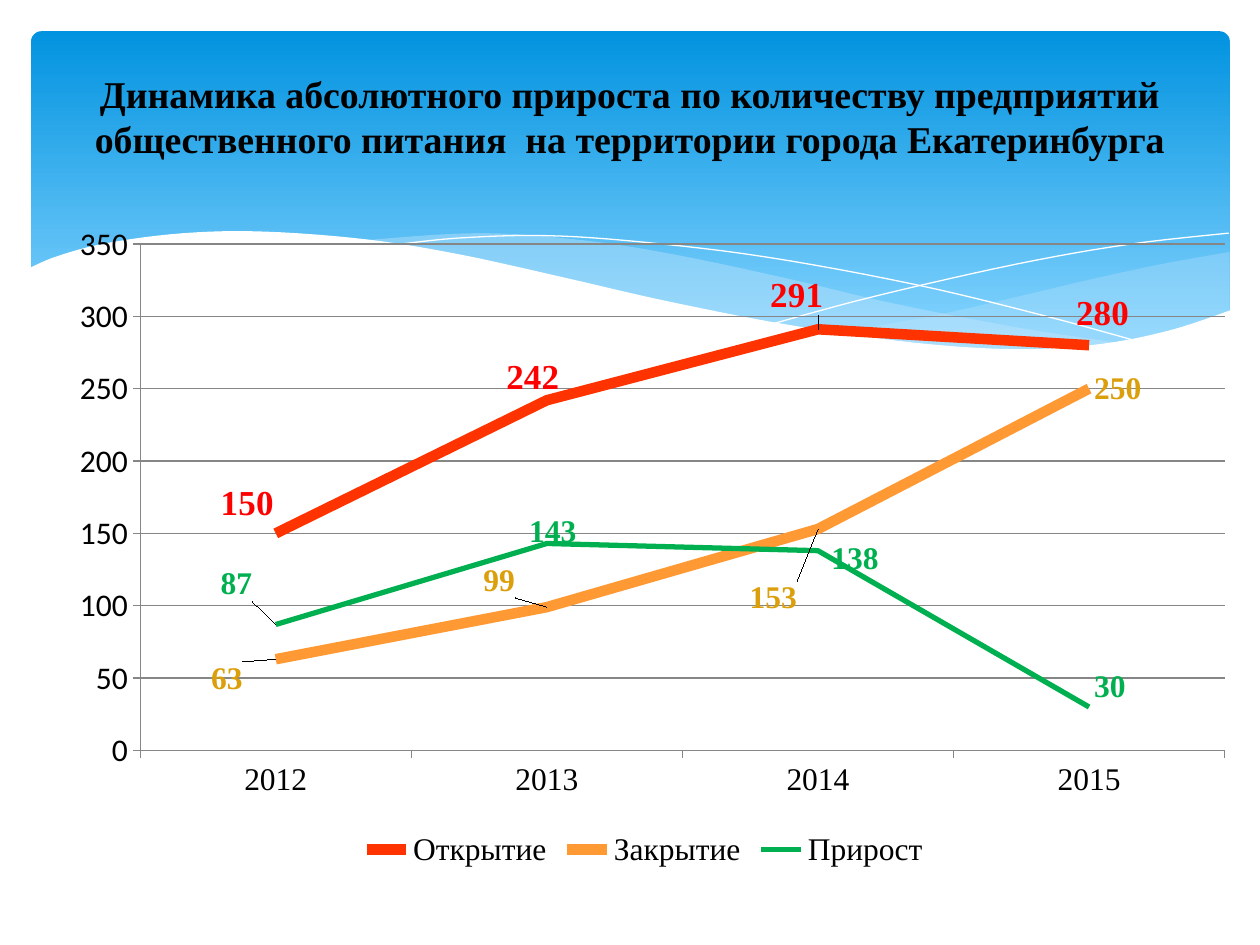
from lxml.etree import SubElement
from pptx import Presentation
from pptx.chart.data import CategoryChartData
from pptx.dml.color import RGBColor
from pptx.enum.chart import XL_CHART_TYPE as ChartType, XL_LABEL_POSITION as LabelSpot
from pptx.enum.chart import XL_LEGEND_POSITION as LegendSpot, XL_MARKER_STYLE as Marker
from pptx.enum.chart import XL_TICK_MARK as Tick
from pptx.enum.shapes import MSO_SHAPE as Preset
from pptx.enum.text import MSO_ANCHOR as Anchor, PP_ALIGN as Align
from pptx.oxml import parse_xml
from pptx.oxml.ns import nsdecls, qn
from pptx.util import Cm, Pt

BLACK = RGBColor(0x00, 0x00, 0x00)
WHITE = RGBColor(0xFF, 0xFF, 0xFF)
GRID = RGBColor(0x86, 0x86, 0x86)
SKY_TOP = RGBColor(0x02, 0x93, 0xE0)
SKY_BOTTOM = RGBColor(0x83, 0xD3, 0xFE)
MIST = RGBColor(0xC6, 0xE7, 0xFC)
RED = RGBColor(0xFF, 0x33, 0x00)
RED_TEXT = RGBColor(0xFF, 0x00, 0x00)
ORANGE = RGBColor(0xFF, 0x99, 0x33)
GOLD_TEXT = RGBColor(0xDC, 0x9F, 0x0C)
GREEN = RGBColor(0x00, 0xB0, 0x50)

TITLE = ("Динамика абсолютного прироста по количеству предприятий "
         "общественного питания  на территории города Екатеринбурга")
YEARS = ["2012", "2013", "2014", "2015"]
SERIES = [
    dict(name="Открытие", values=[150, 242, 291, 280], color=RED, width=6,
         text=RED_TEXT, size=20, shifts=[(-5, -4.5), (-3.8, -3.5), (-4.4, -5.1), (-1.5, -4.8)]),
    dict(name="Закрытие", values=[63, 99, 153, 250], color=ORANGE, width=6,
         text=GOLD_TEXT, size=18, shifts=[(-5.8, 3), (-5.7, -4), (-6.1, 10.5), (0, 0)]),
    dict(name="Прирост", values=[87, 143, 138, 30], color=GREEN, width=3,
         text=GREEN, size=18, shifts=[(-5, -6.1), (-1.9, -1.8), (0.7, 1.2), (0, -3)]),
]

RIGHT_BAND = [
    [(24.79, 5.08), (23.39, 5.33), (21.87, 5.66), (19.13, 6.3), (16.79, 6.73)],
    [(16.79, 6.73), (18.59, 6.96), (20.4, 7.06), (22.15, 6.96), (23.57, 6.68), (24.79, 6.27)],
]
MIDDLE_BAND = [
    [(22.68, 6.93), (20.5, 6.6), (17.93, 6.1), (15.98, 5.64), (13.74, 5.16),
     (11.81, 4.85), (9.65, 4.7), (7.26, 4.85)],
    [(7.26, 4.85), (9.19, 5.16), (11.4, 5.64), (14.38, 6.3), (16.89, 6.76),
     (19.33, 7.04), (21.03, 7.06), (22.68, 6.93)],
]
FALLING_LINE = [[(7.85, 4.95), (9.22, 4.8), (11, 4.75), (12.95, 4.88), (15.44, 5.18),
                 (18.47, 5.74), (21.11, 6.38), (23.04, 6.91)]]
RISING_LINE = [[(15.57, 6.53), (17.65, 5.97), (20.47, 5.33), (22.73, 4.93), (24.77, 4.7)]]
WHITE_WAVE = [
    [(24.82, 6.25), (23.62, 6.65), (22.23, 6.93), (20.55, 7.04), (18.44, 6.91),
     (15.9, 6.55), (13.44, 6.07), (11.35, 5.59), (9.27, 5.13), (7.42, 4.83),
     (5.36, 4.67), (3.71, 4.7), (2.16, 4.9), (1.17, 5.16), (0.58, 5.41)],
    [(0.58, 8.36), (24.82, 8.36)],
]


def smooth(knots, steps=6):
    padded = [knots[0], *knots, knots[-1]]
    points = [knots[0]]
    for a, b, c, d in zip(padded, padded[1:], padded[2:], padded[3:]):
        for step in range(1, steps + 1):
            t = step / steps
            points.append(tuple(
                (2 * q + (r - p) * t + (2 * p - 5 * q + 4 * r - s) * t ** 2
                 + (3 * q - p - 3 * r + s) * t ** 3) / 2
                for p, q, r, s in zip(a, b, c, d)))
    return points


def manual_layout(**parts):
    inner = "".join(f'<c:{tag} val="{value}"/>' for tag, value in parts.items())
    return parse_xml(f'<c:layout {nsdecls("c")}><c:manualLayout>{inner}'
                     '</c:manualLayout></c:layout>')


class SlideBuilder:
    serif = "Times New Roman"
    sans = "Calibri"

    def __init__(self, page):
        self.page = page

    def style(self, font, size, color=BLACK, name=serif, bold=False):
        font.name, font.size, font.bold = name, Pt(size), bold
        font.color.rgb = color

    def sky(self, left, top, width, height):
        panel = self.page.shapes.add_shape(
            Preset.ROUNDED_RECTANGLE, Cm(left), Cm(top), Cm(width), Cm(height))
        panel.adjustments[0] = 0.03
        panel.shadow.inherit = False
        panel.line.fill.background()
        panel.fill.gradient()
        panel.fill.gradient_angle = 270
        for stop, color, place in zip(panel.fill.gradient_stops, (SKY_TOP, SKY_BOTTOM), (0, 0.9)):
            stop.color.rgb, stop.position = color, place

    def outline(self, curves, fill=None, opacity=100):
        points = [(Cm(x), Cm(y)) for curve in curves for x, y in smooth(curve)]
        builder = self.page.shapes.build_freeform(*points[0])
        builder.add_line_segments(points[1:], close=fill is not None)
        shape = builder.convert_to_shape()
        shape.shadow.inherit = False
        if fill is None:
            shape.fill.background()
            shape.line.color.rgb = WHITE
            shape.line.width = Pt(0)
            return
        shape.line.fill.background()
        shape.fill.solid()
        shape.fill.fore_color.rgb = fill
        if opacity < 100:
            color = shape.fill._xPr.find(qn("a:solidFill"))[0]
            SubElement(color, qn("a:alpha")).set("val", str(opacity * 1000))

    def title(self, text, left, top, width, height):
        frame = self.page.shapes.add_textbox(Cm(left), Cm(top), Cm(width), Cm(height)).text_frame
        frame.word_wrap = True
        frame.vertical_anchor = Anchor.MIDDLE
        para = frame.paragraphs[0]
        para.text = text
        para.alignment = Align.CENTER
        self.style(para.font, 21.6, bold=True)

    def line_chart(self, years, rows, left, top, width, height):
        data = CategoryChartData()
        data.categories = years
        for row in rows:
            data.add_series(row["name"], row["values"])
        chart = self.page.shapes.add_chart(
            ChartType.LINE, Cm(left), Cm(top), Cm(width), Cm(height), data).chart
        chart.has_title = False
        self.style(chart.font, 18, name=self.sans)
        chart.has_legend = True
        chart.legend.position = LegendSpot.BOTTOM
        chart.legend.include_in_layout = False
        self.style(chart.legend.font, 18)

        for axis, name in ((chart.category_axis, self.serif), (chart.value_axis, self.sans)):
            axis.major_tick_mark = Tick.OUTSIDE
            axis.format.line.color.rgb = GRID
            self.style(axis.tick_labels.font, 18, name=name)
        scale = chart.value_axis
        scale.minimum_scale, scale.maximum_scale, scale.major_unit = 0, 350, 50
        scale.has_major_gridlines = True
        scale.major_gridlines.format.line.color.rgb = GRID

        area = chart._chartSpace.find(".//" + qn("c:plotArea"))
        for old in area.findall(qn("c:layout")):
            area.remove(old)
        area.insert(0, manual_layout(layoutTarget="inner", xMode="edge", yMode="edge",
                                     x=0.08, y=0.045, w=0.903, h=0.769))
        chart.plots[0].vary_by_categories = False
        for series, row in zip(chart.plots[0].series, rows):
            self.line_series(series, row)

    def line_series(self, series, row):
        series.smooth = False
        series.marker.style = Marker.NONE
        series.format.line.color.rgb = row["color"]
        series.format.line.width = Pt(row["width"])
        for index in range(len(row["values"])):
            label = series.points[index].data_label
            self.style(label.font, row["size"], row["text"], bold=True)
            label.position = LabelSpot.RIGHT
        for label, (x, y) in zip(series._element.iter(qn("c:dLbl")), row["shifts"]):
            label.insert(1, manual_layout(x=x / 100, y=y / 100))


def main():
    deck = Presentation()
    deck.slide_width, deck.slide_height = Cm(25.4), Cm(19.05)
    slide = SlideBuilder(deck.slides.add_slide(deck.slide_layouts[6]))
    slide.sky(0.63, 0.63, 24.16, 6.86)
    slide.outline(RIGHT_BAND, MIST, 29)
    slide.outline(MIDDLE_BAND, MIST, 40)
    slide.outline(FALLING_LINE)
    slide.outline(RISING_LINE)
    slide.outline(WHITE_WAVE, WHITE)
    slide.line_chart(YEARS, SERIES, 0.89, 4.32, 24.21, 13.28)
    slide.title(TITLE, 1.27, 0.94, 22.86, 2.79)
    deck.save("out.pptx")


if __name__ == "__main__":
    main()
